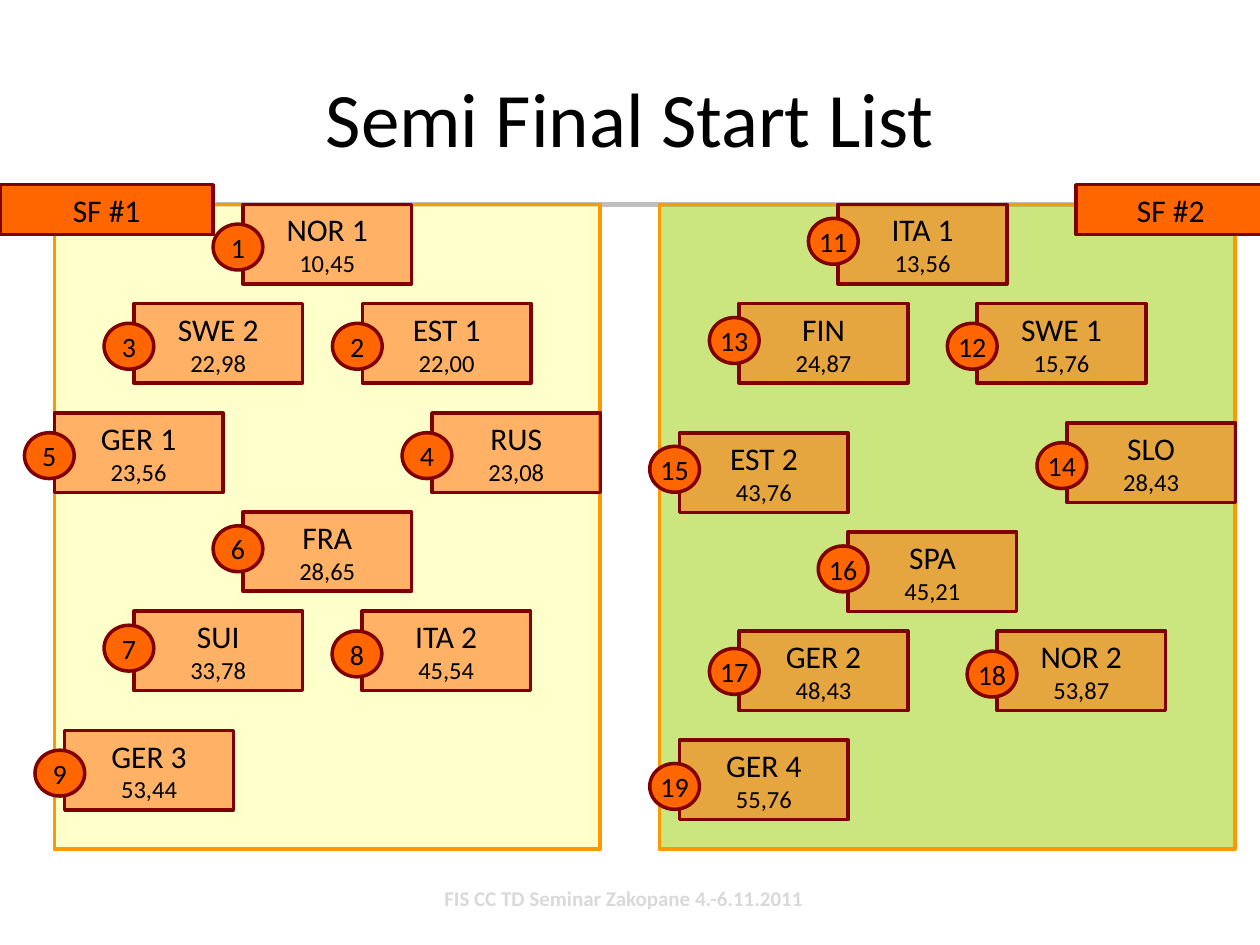
from lxml.etree import SubElement
from pptx import Presentation
from pptx.dml.color import RGBColor
from pptx.enum.shapes import MSO_CONNECTOR, MSO_SHAPE
from pptx.enum.text import MSO_ANCHOR, PP_ALIGN
from pptx.oxml.ns import qn
from pptx.util import Pt

COLORS = {
    "rule": "BFBFBF",
    "footer": "D9D9D9",
    "text": "000000",
    "orange": "FF6600",
    "maroon": "800000",
    "panel_line": "FF9900",
    "first_panel": "FFFF99",
    "second_panel": "99CC00",
}
BOX_WIDTH, BOX_HEIGHT = 96.4, 45.4
BADGE_WIDTH, BADGE_HEIGHT = 28.4, 26.2
BADGE_OVERHANG = 17

PANELS = [
    (31, 312, "first_panel"),
    (376.8, 329, "second_panel"),
]
TABS = [
    ("SF #1", 0, 121.9),
    ("SF #2", 615, 108),
]
ENTRIES = [
    (1, "NOR 1", "10,45", 138.8, 116.8, 11.3),
    (2, "EST 1", "22,00", 207, 173.5, 11.3),
    (3, "SWE 2", "22,98", 76.5, 173.5, 11.3),
    (4, "RUS", "23,08", 246.8, 236, 11.3),
    (5, "GER 1", "23,56", 31, 236, 11.3),
    (6, "FRA", "28,65", 138.8, 292.5, 8),
    (7, "SUI", "33,78", 76.5, 349.3, 8),
    (8, "ITA 2", "45,54", 206.8, 349.3, 11.3),
    (9, "GER 3", "53,44", 37, 417.4, 11.3),
    (11, "ITA 1", "13,56", 479, 116.8, 8),
    (12, "SWE 1", "15,76", 558.4, 173.5, 11.3),
    (13, "FIN", "24,87", 422.4, 173.5, 8),
    (14, "SLO", "28,43", 609.6, 241.7, 11.3),
    (15, "EST 2", "43,76", 388.3, 247.5, 7.6),
    (16, "SPA", "45,21", 484.6, 304, 8),
    (17, "GER 2", "48,43", 422.4, 360.6, 10),
    (18, "NOR 2", "53,87", 569.7, 360.6, 11.5),
    (19, "GER 4", "55,76", 388.3, 423, 13.3),
]


def color(name):
    return RGBColor.from_string(COLORS[name])


def apply_format(target, values):
    for name, value in values.items():
        setattr(target, name, value)


def write_lines(text_frame, lines, alignment=PP_ALIGN.CENTER, color_name="text", bold=False):
    for index, (text, size) in enumerate(lines):
        paragraph = text_frame.paragraphs[0] if index == 0 else text_frame.add_paragraph()
        paragraph.text = text
        paragraph.alignment = alignment
        apply_format(paragraph.font, {"name": "Calibri", "size": Pt(size), "bold": bold})
        paragraph.font.color.rgb = color(color_name)


def add_block(slide, kind, bounds, fill, line="maroon", lines=(), opacity=100):
    shape = slide.shapes.add_shape(kind, *map(Pt, bounds))
    shape.shadow.inherit = False
    shape.fill.solid()
    shape.fill.fore_color.rgb = color(fill)
    if opacity < 100:
        fill_color = shape.fill._xPr.find(qn("a:solidFill"))[0]
        SubElement(fill_color, qn("a:alpha"), val=str(opacity * 1000))
    shape.line.color.rgb = color(line)
    shape.line.width = Pt(2)
    if lines:
        apply_format(shape.text_frame, {"word_wrap": False, "vertical_anchor": MSO_ANCHOR.MIDDLE})
        write_lines(shape.text_frame, lines)


def add_rule(slide):
    rule = slide.shapes.add_connector(MSO_CONNECTOR.STRAIGHT, Pt(0), Pt(116.8), Pt(720), Pt(116.8))
    rule.line.color.rgb = color("rule")
    rule.line.width = Pt(3)
    SubElement(rule._element.spPr, qn("a:effectLst"))


def add_title(slide):
    title = slide.shapes.title
    apply_format(title, {"left": Pt(36), "top": Pt(21.6), "width": Pt(648), "height": Pt(90)})
    title.text_frame.vertical_anchor = MSO_ANCHOR.MIDDLE
    write_lines(title.text_frame, [("Semi Final Start List", 44)])


def add_footer(slide):
    footer = slide.shapes.add_textbox(Pt(246.8), Pt(502.6), Pt(222.5), Pt(21.8))
    footer.text_frame.word_wrap = False
    write_lines(footer.text_frame, [("FIS CC TD Seminar Zakopane 4.-6.11.2011", 12)],
                PP_ALIGN.LEFT, "footer", True)


def add_entry(slide, team, time, left, top):
    add_block(slide, MSO_SHAPE.RECTANGLE, (left, top, BOX_WIDTH, BOX_HEIGHT), "orange",
              lines=[(team, 18), (time, 14)], opacity=50)


def add_badge(slide, number, left, top):
    add_block(slide, MSO_SHAPE.OVAL, (left, top, BADGE_WIDTH, BADGE_HEIGHT), "orange",
              lines=[(str(number), 16)])


def main():
    presentation = Presentation()
    apply_format(presentation, {"slide_width": Pt(720), "slide_height": Pt(540)})
    slide = presentation.slides.add_slide(presentation.slide_layouts[5])
    add_rule(slide)
    add_footer(slide)
    add_title(slide)
    for left, width, fill in PANELS:
        add_block(slide, MSO_SHAPE.RECTANGLE, (left, 116.8, width, 368.5), fill,
                  line="panel_line", opacity=50)
    for number, team, time, left, top, drop in ENTRIES:
        add_entry(slide, team, time, left, top)
    for number, team, time, left, top, drop in ENTRIES:
        add_badge(slide, number, left - BADGE_OVERHANG, top + drop)
    for label, left, width in TABS:
        add_block(slide, MSO_SHAPE.RECTANGLE, (left, 105.6, width, 28.4), "orange",
                  lines=[(label, 18)])
    presentation.save("out.pptx")


if __name__ == "__main__":
    main()
